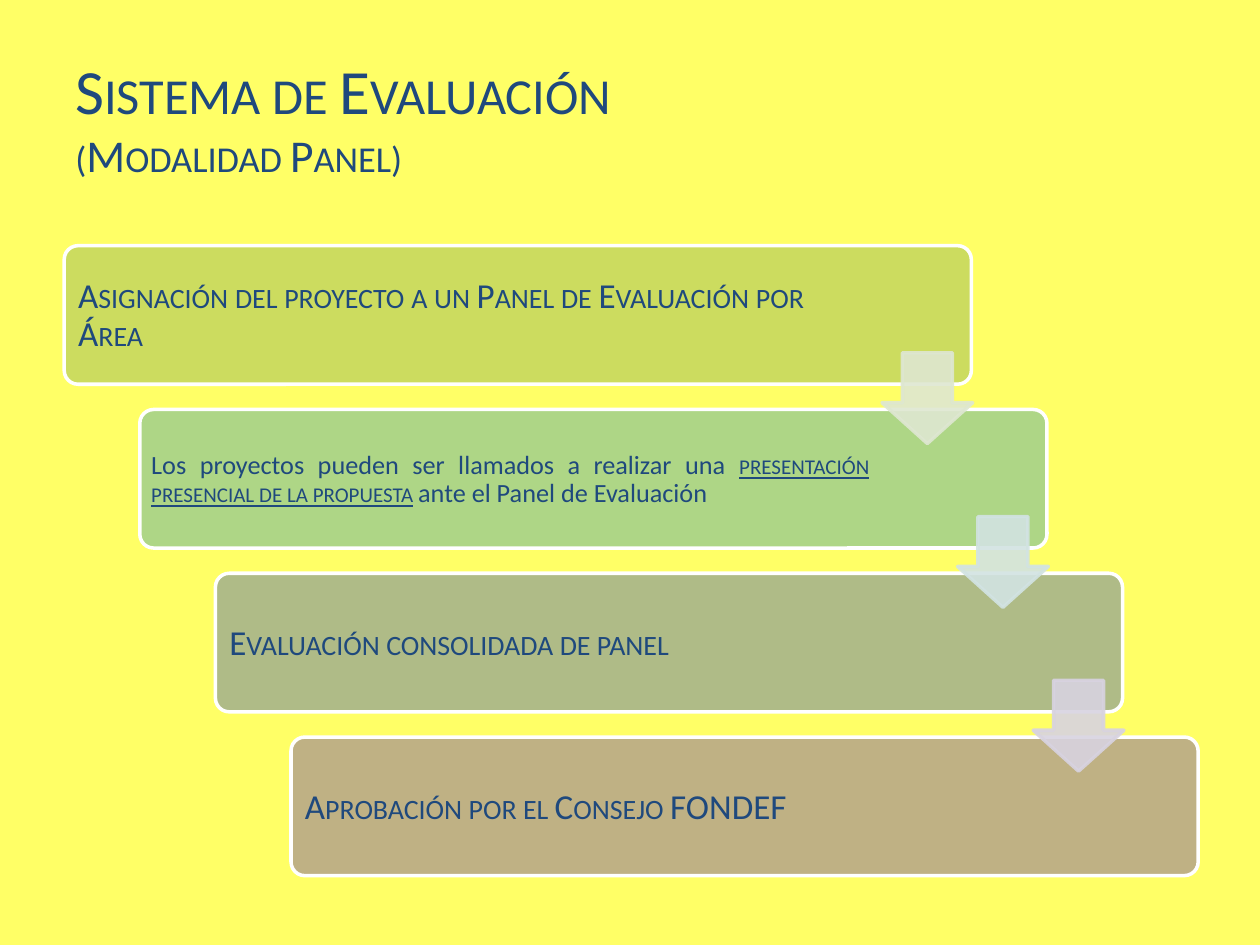
"""Build the slide on the stages of the panel evaluation system."""
from dataclasses import dataclass

from pptx import Presentation
from pptx import util as u
from pptx.dml.color import RGBColor
from pptx.enum import shapes, text
from pptx.oxml import ns
from lxml import etree


@dataclass
class Theme:
    font: str = "Calibri"
    back: str = "FFFF66"
    ink: str = "1F497D"
    edge: str = "FFFFFF"
    bars: tuple = ("9BBB59", "5EAFA6", "6179A8", "8064A2")
    arrows: tuple = ("DEE7D1", "D2E3E2", "D8D3E0")
    title: int = 36
    under: int = 26
    step: int = 20
    note: int = 15


def draw(kind, rect, adj, fill, line, alpha):
    form = slide.shapes.add_shape(kind, *map(u.Inches, rect))
    form.shadow.inherit = False
    for k, value in enumerate(adj):
        form.adjustments[k] = value
    form.fill.solid()
    form.fill.fore_color.rgb = RGBColor.from_string(fill)
    form.line.color.rgb = RGBColor.from_string(line)
    form.line.width = u.Pt(2)
    for color in form._element.spPr.iter(ns.qn("a:srgbClr")):
        if color.get("val") == fill:
            etree.SubElement(color, ns.qn("a:alpha"), val=str(alpha * 1000))


def write(rect, pad, runs):
    box = slide.shapes.add_textbox(*map(u.Inches, rect))
    frame = box.text_frame
    frame.word_wrap = True
    frame.vertical_anchor = text.MSO_ANCHOR.MIDDLE
    frame.margin_left = frame.margin_right = u.Inches(pad)
    frame.margin_top = frame.margin_bottom = u.Inches(min(pad, 0.08))
    para = frame.paragraphs[0]
    for words, size, small, under in runs:
        if words.startswith("\n"):
            para.add_line_break()
        run = para.add_run()
        run.text = words.lstrip("\n")
        run.font.name = theme.font
        run.font.size = u.Pt(size)
        run.font.color.rgb = RGBColor.from_string(theme.ink)
        run.font.underline = under
        if small:
            run._r.get_or_add_rPr().set("cap", "small")
    return para


theme = Theme()
deck = Presentation()
deck.slide_width, deck.slide_height = u.Inches(10), u.Inches(7.5)
slide = deck.slides.add_slide(deck.slide_layouts[6])
slide.background.fill.solid()
slide.background.fill.fore_color.rgb = RGBColor.from_string(theme.back)

write((0.5, 0.3, 7.81, 1.25), 0.1, [
    ("Sistema de Evaluación ", theme.title, True, False),
    ("\n(Modalidad Panel)", theme.under, True, False),
])

steps = [
    (5.92, 0.08, [("Asignación del proyecto a un Panel de Evaluación por Área", theme.step, True, False)]),
    (5.82, 0.06, [
        ("Los proyectos pueden ser llamados a realizar una ", theme.note, False, False),
        ("presentación presencial de la propuesta", theme.note, True, True),
        (" ", theme.note, True, False),
        ("ante el Panel de Evaluación", theme.note, False, False),
    ]),
    (5.82, 0.08, [("Evaluación consolidada de panel", theme.step, True, False)]),
    (5.82, 0.08, [("Aprobación por el Consejo FONDEF", theme.step, True, False)]),
]
for i, (width, pad, runs) in enumerate(steps):
    left, top = 0.51 + 0.6 * i, 1.95 + 1.3 * i
    draw(shapes.MSO_SHAPE.ROUNDED_RECTANGLE, (left, top, 7.2, 1.1), [0.1],
         theme.bars[i], theme.edge, 50)
    para = write((left + 0.03, top + 0.04, width, 1.04), pad, runs)
    para.alignment = text.PP_ALIGN.JUSTIFY
    para.line_spacing = 0.9

for i, color in enumerate(theme.arrows):
    draw(shapes.MSO_SHAPE.DOWN_ARROW, (7 + 0.6 * i, 2.8 + 1.3 * i, 0.72, 0.72),
         [0.55, 0.45], color, color, 90)

deck.save("out.pptx")
